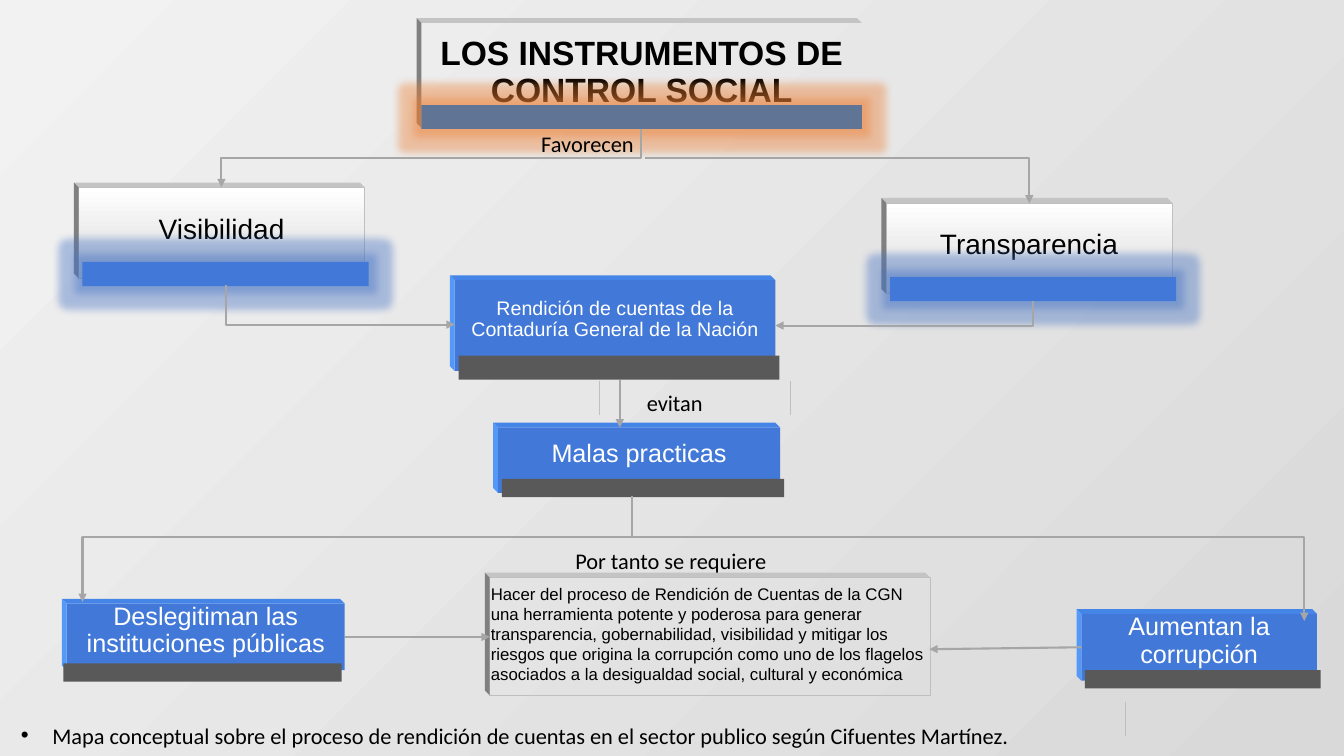
from lxml.etree import SubElement
from pptx import Presentation
from pptx.dml.color import RGBColor
from pptx.enum.shapes import MSO_CONNECTOR, MSO_SHAPE
from pptx.enum.text import MSO_ANCHOR, PP_ALIGN
from pptx.oxml.ns import qn
from pptx.util import Cm, Pt

BLACK = RGBColor(0x00, 0x00, 0x00)
WHITE = RGBColor(0xFF, 0xFF, 0xFF)
PALE = RGBColor(0xF2, 0xF2, 0xF2)
SILVER = RGBColor(0xD9, 0xD9, 0xD9)
FAINT = RGBColor(0xBF, 0xBF, 0xBF)
GREY = RGBColor(0xA6, 0xA6, 0xA6)
EDGE_TOP = RGBColor(0xC4, 0xC4, 0xC4)
EDGE_LEFT = RGBColor(0x80, 0x80, 0x80)
DARK = RGBColor(0x59, 0x59, 0x59)
SLATE = RGBColor(0x60, 0x75, 0x96)
BLUE = RGBColor(0x42, 0x79, 0xD8)
BLUE_TOP = RGBColor(0x46, 0x85, 0xE8)
BLUE_LEFT = RGBColor(0x55, 0x99, 0xF8)
GLOW_BLUE = RGBColor(0x44, 0x72, 0xC4)
GLOW_ORANGE = RGBColor(0xED, 0x7D, 0x31)


def write(tf, text, size, font, color, align=PP_ALIGN.LEFT, bold=False):
    p = tf.paragraphs[0]
    p.alignment = align
    r = p.add_run()
    r.text = text
    r.font.size = Pt(size)
    r.font.name = font
    r.font.bold = bold
    r.font.color.rgb = color
    return p


def connect(kind, x1, y1, x2, y2, color=GREY, width=1.5, arrow=True):
    c = s.shapes.add_connector(kind, Cm(x1), Cm(y1), Cm(x2), Cm(y2))
    c.line.color.rgb = color
    c.line.width = Pt(width)
    spPr = c._element.spPr
    if arrow:
        SubElement(spPr.find(qn("a:ln")), qn("a:tailEnd"), type="triangle")
    SubElement(spPr, qn("a:effectLst"))
    return spPr


prs = Presentation()
prs.slide_width = Cm(33.87)
prs.slide_height = Cm(19.05)
s = prs.slides.add_slide(prs.slide_layouts[5])

fill = s.background.fill
fill.gradient()
fill.gradient_angle = 135
fill.gradient_stops[0].color.rgb = SILVER
fill.gradient_stops[1].color.rgb = PALE

for x, y in [(15.11, 9.6), (19.91, 9.6), (28.35, 17.68)]:
    connect(MSO_CONNECTOR.STRAIGHT, x, y, x, y + 0.86, FAINT, 0.25, False)

styles = {
    "title": (None, BLACK, EDGE_TOP, EDGE_LEFT, SLATE, GLOW_ORANGE),
    "light": (SILVER, BLACK, EDGE_TOP, EDGE_LEFT, BLUE, GLOW_BLUE),
    "blue": (BLUE, WHITE, BLUE_TOP, BLUE_LEFT, DARK, None),
    "goal": (None, BLACK, EDGE_TOP, EDGE_LEFT, None, None),
}
boxes = [
    ("title", "LOS INSTRUMENTOS DE CONTROL SOCIAL", 24,
     (10.62, 0.58, 11.1, 2.64), (10.62, 2.65, 0.6)),
    ("light", "Visibilidad", 20, (1.98, 4.72, 7.21, 2.29), (2.08, 6.6, 0.61)),
    ("light", "Transparencia", 20, (22.33, 5.11, 7.21, 2.29), (22.43, 6.98, 0.61)),
    ("blue", "Rendición de cuentas de la Contaduría General de la Nación", 14,
     (11.46, 7.06, 8.08, 2.29), (11.56, 8.96, 0.61)),
    ("blue", "Malas practicas", 18, (12.55, 10.77, 7.11, 1.65), (12.65, 12.07, 0.46)),
    ("blue", "Deslegitiman las instituciones públicas", 18,
     (1.68, 15.21, 7.01, 1.68), (1.6, 16.72, 0.46)),
    ("blue", "Aumentan la corrupción", 18,
     (27.25, 15.47, 5.94, 1.68), (27.34, 16.89, 0.46)),
    ("goal", "Hacer del proceso de Rendición de Cuentas de la CGN una herramienta "
     "potente y poderosa para generar transparencia, gobernabilidad, visibilidad y "
     "mitigar los riesgos que origina la corrupción como uno de los flagelos "
     "asociados a la desigualdad social, cultural y económica", 12,
     (12.34, 14.55, 11.1, 2.97), None),
]
E = 0.12
for style, text, size, (x, y, w, h), bar in boxes:
    face, ink, top, left, bar_color, glow = styles[style]
    if style == "title":
        sp = s.shapes.title
        sp.left, sp.top, sp.width, sp.height = Cm(x), Cm(y), Cm(w), Cm(h)
    else:
        sp = s.shapes.add_shape(MSO_SHAPE.RECTANGLE, Cm(x), Cm(y), Cm(w), Cm(h))
        sp.shadow.inherit = False
    if style == "light":
        sp.fill.gradient()
        sp.fill.gradient_angle = 270
        sp.fill.gradient_stops[0].color.rgb = WHITE
        sp.fill.gradient_stops[1].color.rgb = face
    elif face:
        sp.fill.solid()
        sp.fill.fore_color.rgb = face
    else:
        sp.fill.background()
    if style in ("light", "goal"):
        sp.line.color.rgb = FAINT
        sp.line.width = Pt(0.25)
    else:
        sp.line.fill.background()

    tf = sp.text_frame
    tf.word_wrap = True
    tf.vertical_anchor = MSO_ANCHOR.MIDDLE
    tf.margin_left = tf.margin_right = Cm(0.03 if style in ("title", "goal") else 0.2)
    tf.margin_top = Cm(0 if style == "blue" else 0.03)
    tf.margin_bottom = Cm(0.3 if style == "blue" else 0.15)
    align = PP_ALIGN.LEFT if style == "goal" else PP_ALIGN.CENTER
    p = write(tf, text, size, "Arial", ink, align, style == "title")
    p.line_spacing = 1.0 if style == "goal" else 0.9

    top_edge = [(x - E, y - E), (x + w - E, y - E), (x + w, y), (x, y)]
    left_edge = [(x - E, y - E), (x, y), (x, y + h), (x - E, y + h - E)]
    for points, color in [(top_edge, top), (left_edge, left)]:
        points = [(Cm(px), Cm(py)) for px, py in points]
        fb = s.shapes.build_freeform(*points[0])
        fb.add_line_segments(points[1:])
        edge = fb.convert_to_shape()
        edge.shadow.inherit = False
        edge.fill.solid()
        edge.fill.fore_color.rgb = color
        edge.line.fill.background()

    if bar:
        bx, by, bh = bar
        strip = s.shapes.add_shape(MSO_SHAPE.RECTANGLE, Cm(bx), Cm(by), Cm(w), Cm(bh))
        strip.shadow.inherit = False
        strip.fill.solid()
        strip.fill.fore_color.rgb = bar_color
        strip.line.fill.background()
        if glow:
            effects = strip._element.spPr.find(qn("a:effectLst"))
            halo = SubElement(effects, qn("a:glow"), rad=str(Cm(0.4)))
            clr = SubElement(halo, qn("a:srgbClr"), val=str(glow))
            SubElement(clr, qn("a:alpha"), val="40000")

labels = [
    ("Favorecen", 13.39, 3.15, 9.83),
    ("evitan", 16.05, 9.68, 9.83),
    ("Por tanto se requiere", 14.25, 13.67, 5.41),
    ("Mapa conceptual sobre el proceso de rendición de cuentas en el sector publico "
     "según Cifuentes Martínez.", 0.28, 18.06, 33.58),
]
for text, x, y, w in labels:
    tf = s.shapes.add_textbox(Cm(x), Cm(y), Cm(w), Cm(0.94)).text_frame
    tf.word_wrap = True
    p = write(tf, text, 16, "Calibri", BLACK)
pPr = p._p.get_or_add_pPr()
pPr.set("marL", str(Cm(0.79)))
pPr.set("indent", str(-Cm(0.79)))
SubElement(pPr, qn("a:buFont"), typeface="Arial")
SubElement(pPr, qn("a:buChar"), char="•")

connect(MSO_CONNECTOR.STRAIGHT, 15.93, 12.5, 15.93, 13.54, arrow=False)
for x1, y1, x2, y2 in [
    (15.62, 9.58, 15.62, 10.77),
    (8.69, 16.05, 12.34, 16.05),
    (27.25, 16.31, 23.42, 16.36),
]:
    connect(MSO_CONNECTOR.STRAIGHT, x1, y1, x2, y2)

elbows = [
    ("bentConnector3", 2.08, 13.54, 13.84, 1.63, 180, "flipV", 100000),
    ("bentConnector3", 15.93, 13.54, 16.94, 2.11, 0, None, 100000),
    ("bentConnector3", 10.13, -1.3, 1.47, 10.57, 90, None, 50000),
    ("bentConnector2", 16.26, 3.99, 9.68, 1.14, 0, None, None),
    ("bentConnector2", 8.08, 4.8, 0.99, 5.77, 270, "flipH", None),
    ("bentConnector2", 22.48, 4.65, 0.61, 6.5, 90, None, None),
]
for bend, x, y, w, h, turn, flip, adj in elbows:
    spPr = connect(MSO_CONNECTOR.ELBOW, x, y, x + w, y + h)
    xfrm = spPr.find(qn("a:xfrm"))
    xfrm.set("rot", str(turn * 60000))
    if flip:
        xfrm.set(flip, "1")
    geom = spPr.find(qn("a:prstGeom"))
    geom.set("prst", bend)
    if adj:
        SubElement(geom.find(qn("a:avLst")), qn("a:gd"), name="adj1", fmla=f"val {adj}")

prs.save("out.pptx")
